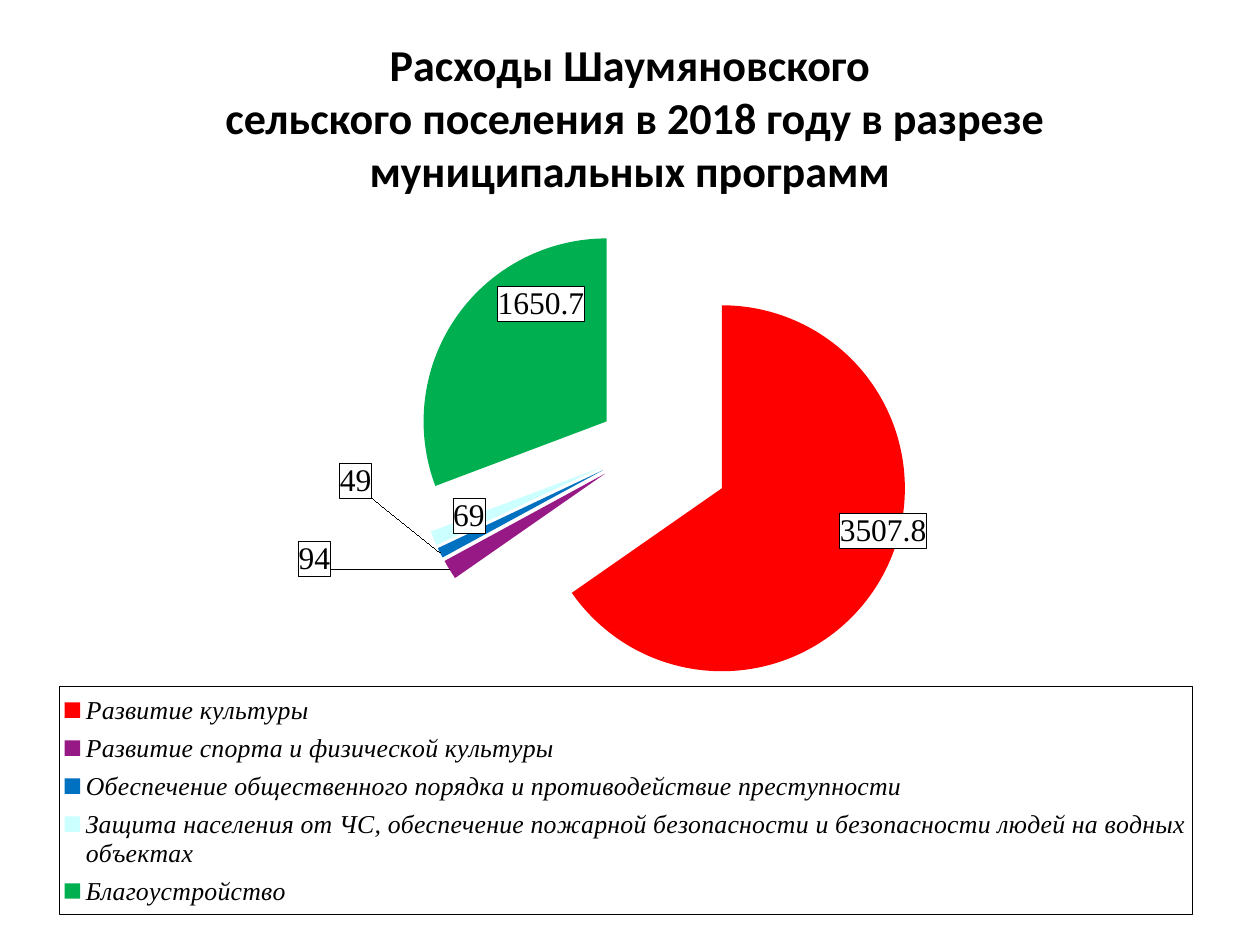
from lxml.etree import SubElement
from pptx import Presentation
from pptx.chart.data import CategoryChartData
from pptx.dml.color import RGBColor
from pptx.enum.chart import XL_CHART_TYPE, XL_LABEL_POSITION, XL_LEGEND_POSITION
from pptx.enum.text import MSO_ANCHOR, PP_ALIGN
from pptx.oxml import parse_xml
from pptx.oxml.ns import nsdecls, qn
from pptx.util import Inches, Pt

COLORS = {"black": "000000", "white": "FFFFFF", "red": "FF0000", "purple": "971985",
          "blue": "0070C0", "cyan": "CCFFFF", "green": "00B050"}
TITLE = "Расходы Шаумяновского\v сельского поселения в 2018 году в разрезе муниципальных программ"
BURST = 26
PROGRAMS = [
    ("Развитие культуры", 3507.8, "red", 47, (0.39, -0.17)),
    ("Развитие спорта и физической культуры", 94, "purple", BURST, (-1.25, 0.08)),
    ("Обеспечение общественного порядка и противодействие преступности", 49, "blue", BURST, (-0.85, -0.41)),
    ("Защита населения от ЧС, обеспечение пожарной безопасности и безопасности людей на водных объектах",
     69, "cyan", BURST, (0.1, -0.02)),
    ("Благоустройство", 1650.7, "green", BURST, (0.28, -0.28)),
]
BOX = (f'<c:spPr {nsdecls("c", "a")}><a:solidFill><a:srgbClr val="{COLORS["white"]}"/></a:solidFill>'
       f'<a:ln w="3175"><a:solidFill><a:srgbClr val="{COLORS["black"]}"/></a:solidFill></a:ln></c:spPr>')


class Deck:
    """Holds the style and the current slide."""

    def __init__(self, prs):
        self.s = prs.slides.add_slide(prs.slide_layouts[6])
        self.title = {"name": "Calibri", "size": Pt(25.2), "bold": True}
        self.label = {"name": "Times New Roman", "size": Pt(18), "bold": False}
        self.legend = {"name": "Times New Roman", "size": Pt(14.7), "italic": True}

    def font(self, font, style):
        for key, value in style.items():
            setattr(font, key, value)
        font.color.rgb = RGBColor.from_string(COLORS["black"])

    def layout(self, parent, index, lengths, **modes):
        old = parent.find(qn("c:layout"))
        if old is not None:
            parent.remove(old)
        layout = parent.makeelement(qn("c:layout"))
        parent.insert(index, layout)
        manual = SubElement(layout, qn("c:manualLayout"))
        w, h = self.size
        shares = {key: n / total for key, n, total in zip("xywh", lengths, (w, h, w, h))}
        for key, value in {**modes, **shares}.items():
            SubElement(manual, qn(f"c:{key}")).set("val", str(value))

    def text(self, text, x, y, w, h):
        sp = self.s.shapes.add_textbox(Inches(x), Inches(y), Inches(w), Inches(h))
        tf = sp.text_frame
        for key, value in {"word_wrap": True, "vertical_anchor": MSO_ANCHOR.MIDDLE}.items():
            setattr(tf, key, value)
        p = tf.paragraphs[0]
        p.text = text
        p.alignment = PP_ALIGN.CENTER
        for r in p.runs:
            self.font(r.font, self.title)

    def pie(self, programs, x, y, w, h):
        self.size = w, h
        data = CategoryChartData()
        data.categories = [row[0] for row in programs]
        data.add_series("Series 1", [row[1] for row in programs])
        chart = self.s.shapes.add_chart(XL_CHART_TYPE.PIE, Inches(x), Inches(y), Inches(w), Inches(h), data).chart
        chart.has_title = False
        chart.has_legend = True
        self.font(chart.font, {"name": "Calibri", "size": Pt(18)})
        legend = chart.legend
        legend.position = XL_LEGEND_POSITION.BOTTOM
        legend.include_in_layout = False
        self.font(legend.font, self.legend)
        el = legend._element
        self.layout(el, 1, (0.02, 3.75, 8.99, 1.81), xMode="edge", yMode="edge")
        el.find(qn("c:txPr")).addprevious(parse_xml(BOX))
        plot = chart.plots[0]
        plot.vary_by_categories = True
        self.layout(plot._element.getparent(), 0, (0.31, 0.03, 8.73, 3.66),
                    layoutTarget="inner", xMode="edge", yMode="edge")
        self.slices(plot.series[0], programs)

    def explode(self, following, percent):
        burst = following.makeelement(qn("c:explosion"), {"val": str(percent)})
        following.addprevious(burst)

    def slices(self, series, programs):
        labels = series.data_labels
        for key, value in {"show_value": True, "position": XL_LABEL_POSITION.INSIDE_END}.items():
            setattr(labels, key, value)
        self.font(labels.font, self.label)
        labels._element.find(qn("c:txPr")).addprevious(parse_xml(BOX))
        labels._element.find(qn("c:showLeaderLines")).set("val", "1")
        for i, (_, _, color, burst, offset) in enumerate(programs):
            point = series.points[i]
            fill = point.format.fill
            fill.solid()
            fill.fore_color.rgb = RGBColor.from_string(COLORS[color])
            point.format.line.fill.background()
            dpt = series._element.findall(qn("c:dPt"))[i]
            self.explode(dpt.find(qn("c:spPr")), burst)
            label = point.data_label
            self.font(label.font, self.label)
            label.position = XL_LABEL_POSITION.INSIDE_END
            el = labels._element.findall(qn("c:dLbl"))[i]
            self.layout(el, 1, offset)
            el.find(qn("c:txPr")).addprevious(parse_xml(BOX))
        self.explode(series._element.find(qn("c:dPt")), BURST)


def main():
    prs = Presentation()
    prs.slide_width, prs.slide_height = Inches(10), Inches(7.5)
    deck = Deck(prs)
    deck.text(TITLE, 0.5, 0.3, 9, 1.25)
    deck.pie(PROGRAMS, 0.45, 1.7, 9.04, 5.58)
    prs.save("out.pptx")


if __name__ == "__main__":
    main()
